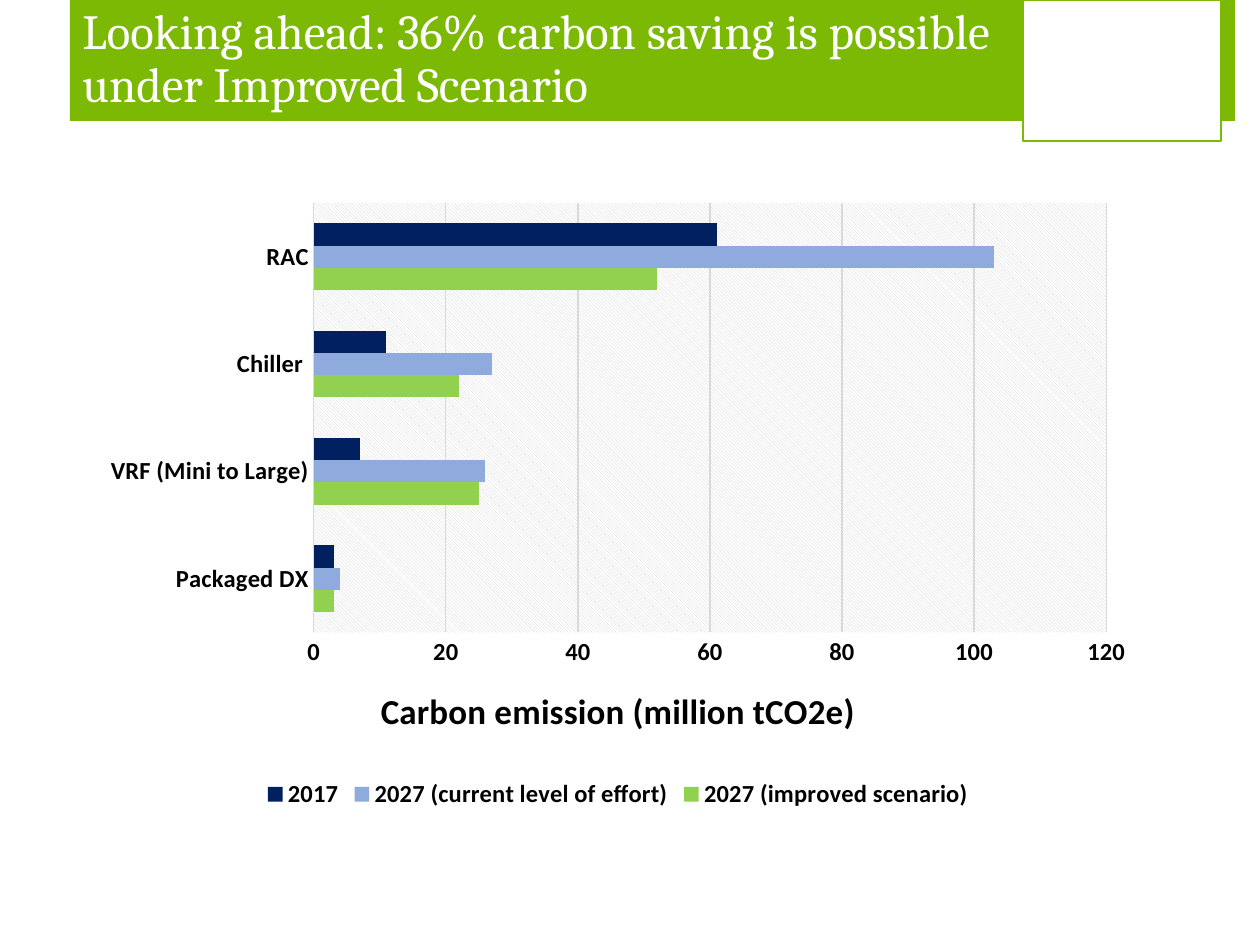
from lxml.etree import fromstring
from pptx import Presentation
from pptx.chart.data import CategoryChartData
from pptx.dml.color import RGBColor
from pptx.enum.chart import XL_CHART_TYPE, XL_LEGEND_POSITION, XL_TICK_MARK
from pptx.enum.shapes import MSO_SHAPE
from pptx.enum.text import MSO_ANCHOR
from pptx.util import Pt

PX = 914400 // 126
GREEN, WHITE, BLACK, GRAY = "7CB904", "FFFFFF", "000000", "D9D9D9"

TITLE = "Looking ahead: 36% carbon saving is possible under Improved Scenario"
AXIS_TITLE = "Carbon emission (million tCO2e)"
CATEGORIES = ["Packaged DX", "VRF (Mini to Large)", "Chiller ", "RAC"]
SERIES = [
    ("2027 (improved scenario)", (3, 25, 22, 52), "92D050"),
    ("2027 (current level of effort)", (4, 26, 27, 103), "8FAADC"),
    ("2017", (3, 7, 11, 61), "002060"),
]
BANNER = (70, 0, 1165, 121)
LOGO_FRAME = (1023, 0, 198, 141)
TITLE_AREA = (70, 0, 953, 121)
CHART_AREA = (89, 190, 1058, 625)

NAMESPACES = (
    'xmlns:c="http://schemas.openxmlformats.org/drawingml/2006/chart" '
    'xmlns:a="http://schemas.openxmlformats.org/drawingml/2006/main"'
)
PLOT_STYLE = (
    f'<c:spPr {NAMESPACES}><a:pattFill prst="ltDnDiag">'
    '<a:fgClr><a:srgbClr val="D0CECE"/></a:fgClr>'
    '<a:bgClr><a:srgbClr val="FFFFFF"/></a:bgClr>'
    '</a:pattFill><a:ln><a:noFill/></a:ln></c:spPr>'
)
CHART_STYLE = (
    f'<c:spPr {NAMESPACES}><a:noFill/><a:ln w="9525"><a:solidFill>'
    '<a:srgbClr val="FFFFFF"/></a:solidFill></a:ln></c:spPr>'
)


def color(value):
    return RGBColor.from_string(value)


def scaled(area):
    return [value * PX for value in area]


def style_font(font, size, tint=BLACK, name="Calibri", bold=False):
    font.size = Pt(size)
    font.name = name
    font.bold = bold
    font.color.rgb = color(tint)


def write(frame, text, spacing=None, **style):
    para = frame.paragraphs[0]
    para.line_spacing = spacing
    span = para.add_run()
    span.text = text
    style_font(span.font, **style)


def style_line(line, tint, width):
    line.color.rgb = color(tint)
    line.width = Pt(width)


def add_rectangle(page, area, fill, outline=None):
    box = page.shapes.add_shape(MSO_SHAPE.RECTANGLE, *scaled(area))
    box.shadow.inherit = False
    box.fill.solid()
    box.fill.fore_color.rgb = color(fill)
    if outline:
        style_line(box.line, outline, 1.5)
    else:
        box.line.fill.background()


def add_title(page):
    box = page.shapes.add_textbox(*scaled(TITLE_AREA))
    box.text_frame.word_wrap = True
    box.text_frame.vertical_anchor = MSO_ANCHOR.MIDDLE
    write(box.text_frame, TITLE, spacing=0.9, size=28, tint=WHITE, name="Cambria")


def add_emission_chart(page):
    data = CategoryChartData(number_format="0")
    data.categories = CATEGORIES
    for name, values, _ in SERIES:
        data.add_series(name, values)
    chart = page.shapes.add_chart(
        XL_CHART_TYPE.BAR_CLUSTERED, *scaled(CHART_AREA), data
    ).chart
    style_font(chart.font, 10)
    chart.has_title = False

    plot = chart.plots[0]
    plot.gap_width = 182
    plot.overlap = 0
    plot.vary_by_categories = False
    for series, (_, _, tint) in zip(plot.series, SERIES):
        series.invert_if_negative = False
        series.format.fill.solid()
        series.format.fill.fore_color.rgb = color(tint)

    for axis in (chart.category_axis, chart.value_axis):
        axis.major_tick_mark = axis.minor_tick_mark = XL_TICK_MARK.NONE
        style_font(axis.tick_labels.font, 14, bold=True)
    style_line(chart.category_axis.format.line, GRAY, 0.75)

    value_axis = chart.value_axis
    value_axis.format.line.fill.background()
    value_axis.has_major_gridlines = True
    style_line(value_axis.major_gridlines.format.line, GRAY, 0.75)
    value_axis.tick_labels.number_format = "0"
    value_axis.tick_labels.number_format_is_linked = False
    write(value_axis.axis_title.text_frame, AXIS_TITLE, size=20, bold=True)

    chart.has_legend = True
    chart.legend.position = XL_LEGEND_POSITION.BOTTOM
    chart.legend.include_in_layout = False
    style_font(chart.legend.font, 14, bold=True)

    chart_node = chart.element.chart
    chart_node.plotArea.append(fromstring(PLOT_STYLE))
    chart_node.addnext(fromstring(CHART_STYLE))


def main():
    deck = Presentation()
    deck.slide_width = 1260 * PX
    deck.slide_height = 945 * PX
    page = deck.slides.add_slide(deck.slide_layouts[6])
    add_rectangle(page, BANNER, GREEN)
    add_rectangle(page, LOGO_FRAME, WHITE, outline=GREEN)
    add_title(page)
    add_emission_chart(page)
    deck.save("out.pptx")


if __name__ == "__main__":
    main()
